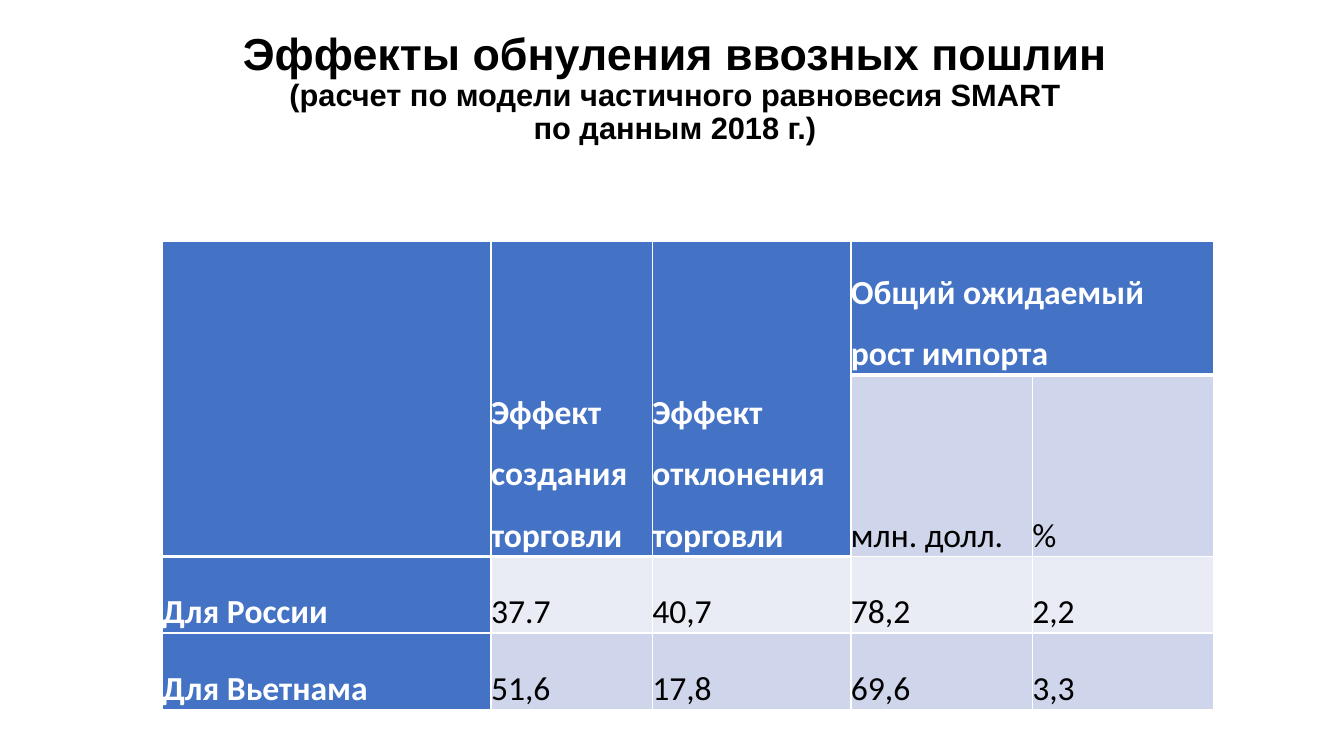
import dataclasses

import lxml.etree
import pptx
import pptx.dml.color
import pptx.enum.text
import pptx.oxml.ns
import pptx.util

WIDE = pptx.util.Inches(13.33)
HIGH = pptx.util.Inches(7.5)
ALIGN = pptx.enum.text.PP_ALIGN
ANCHOR = pptx.enum.text.MSO_ANCHOR


@dataclasses.dataclass(frozen=True)
class Theme:
    dark: str = "000000"
    light: str = "FFFFFF"
    head: str = "4472C4"
    bands: tuple = ("CFD5EA", "E9EBF5")
    title: int = 32
    note: int = 22
    body: int = 24
    thin: int = 1
    thick: int = 3


THEME = Theme()

# Shares of the slide's size, in percent
TITLE = (6.9, 2, 86.65, 19.6)
START = (12.08, 31.87)
COLS = (24.46, 12, 14.78, 13.5, 13.5)
ROWS = (17.73, 11.33, 10.13, 10.13)

CELLS = (
    ("", "Эффект создания торговли", "Эффект отклонения торговли",
     "Общий ожидаемый рост импорта", ""),
    ("", "", "", "млн. долл.", "%"),
    ("Для России", "37.7", "40,7", "78,2", "2,2"),
    ("Для Вьетнама", "51,6", "17,8", "69,6", "3,3"),
)
SPANS = ((0, 0, 1, 0), (0, 1, 1, 1), (0, 2, 1, 2), (0, 3, 0, 4))


def across(share):
    return round(WIDE * share / 100)


def down(share):
    return round(HIGH * share / 100)


def write(frame, text, *, size, color, font="Calibri", bold=False,
          align=ALIGN.LEFT, lead=1.0):
    """Append text to the frame's paragraph; a newline makes a line break."""
    para = frame.paragraphs[0]
    para.alignment = align
    para.line_spacing = lead
    for count, line in enumerate(text.split("\n")):
        if count:
            para.add_line_break()
        run = para.add_run()
        run.text = line
        run.font.name = font
        run.font.size = pptx.util.Pt(size)
        run.font.bold = bold
        run.font.color.rgb = pptx.dml.color.RGBColor.from_string(color)


def edge(cell, side, width):
    name = pptx.oxml.ns.qn
    props = cell._tc.get_or_add_tcPr()
    line = lxml.etree.SubElement(props, name(f"a:ln{side}"),
                                 w=str(pptx.util.Pt(width)))
    fill = lxml.etree.SubElement(line, name("a:solidFill"))
    lxml.etree.SubElement(fill, name("a:srgbClr"), val=THEME.light)


def style(cell, color, base):
    """Set the cell's edges, fill and insets; base is the lower edge's width."""
    cell.margin_left = cell.margin_right = 0
    cell.margin_top = cell.margin_bottom = 0
    cell.vertical_anchor = ANCHOR.BOTTOM
    for side in "LRT":
        edge(cell, side, THEME.thin)
    edge(cell, "B", base)
    cell.fill.solid()
    cell.fill.fore_color.rgb = pptx.dml.color.RGBColor.from_string(color)


def add_title(slide):
    left, top, width, height = TITLE
    box = slide.shapes.add_textbox(across(left), down(top),
                                   across(width), down(height))
    frame = box.text_frame
    frame.word_wrap = True
    frame.vertical_anchor = ANCHOR.MIDDLE
    form = dict(font="Arial", color=THEME.dark, bold=True,
                align=ALIGN.CENTER, lead=0.9)
    write(frame, "Эффекты обнуления ввозных пошлин\n",
          size=THEME.title, **form)
    write(frame, "(расчет по модели частичного равновесия SMART\n"
          "по данным 2018 г.)", size=THEME.note, **form)


def add_grid(slide):
    left, top = START
    table = slide.shapes.add_table(
        len(ROWS), len(COLS), across(left), down(top),
        across(sum(COLS)), down(sum(ROWS))).table
    for col, share in zip(table.columns, COLS):
        col.width = across(share)
    for row, share in zip(table.rows, ROWS):
        row.height = down(share)
    for y, texts in enumerate(CELLS):
        for x, text in enumerate(texts):
            cell = table.cell(y, x)
            top_head = y == 0 or (y == 1 and x < 3)
            head = top_head or x == 0
            style(cell, THEME.head if head else THEME.bands[(y + 1) % 2],
                  THEME.thick if top_head else THEME.thin)
            if text:
                write(cell.text_frame, text, size=THEME.body, bold=head,
                      color=THEME.light if head else THEME.dark,
                      lead=1.07 if text == "37.7" else 1.5)
    for y, x, low, last in SPANS:
        table.cell(y, x).merge(table.cell(low, last))


def main():
    deck = pptx.Presentation()
    deck.slide_width = WIDE
    deck.slide_height = HIGH
    slide = deck.slides.add_slide(deck.slide_layouts[6])
    add_title(slide)
    add_grid(slide)
    deck.save("out.pptx")


if __name__ == "__main__":
    main()
